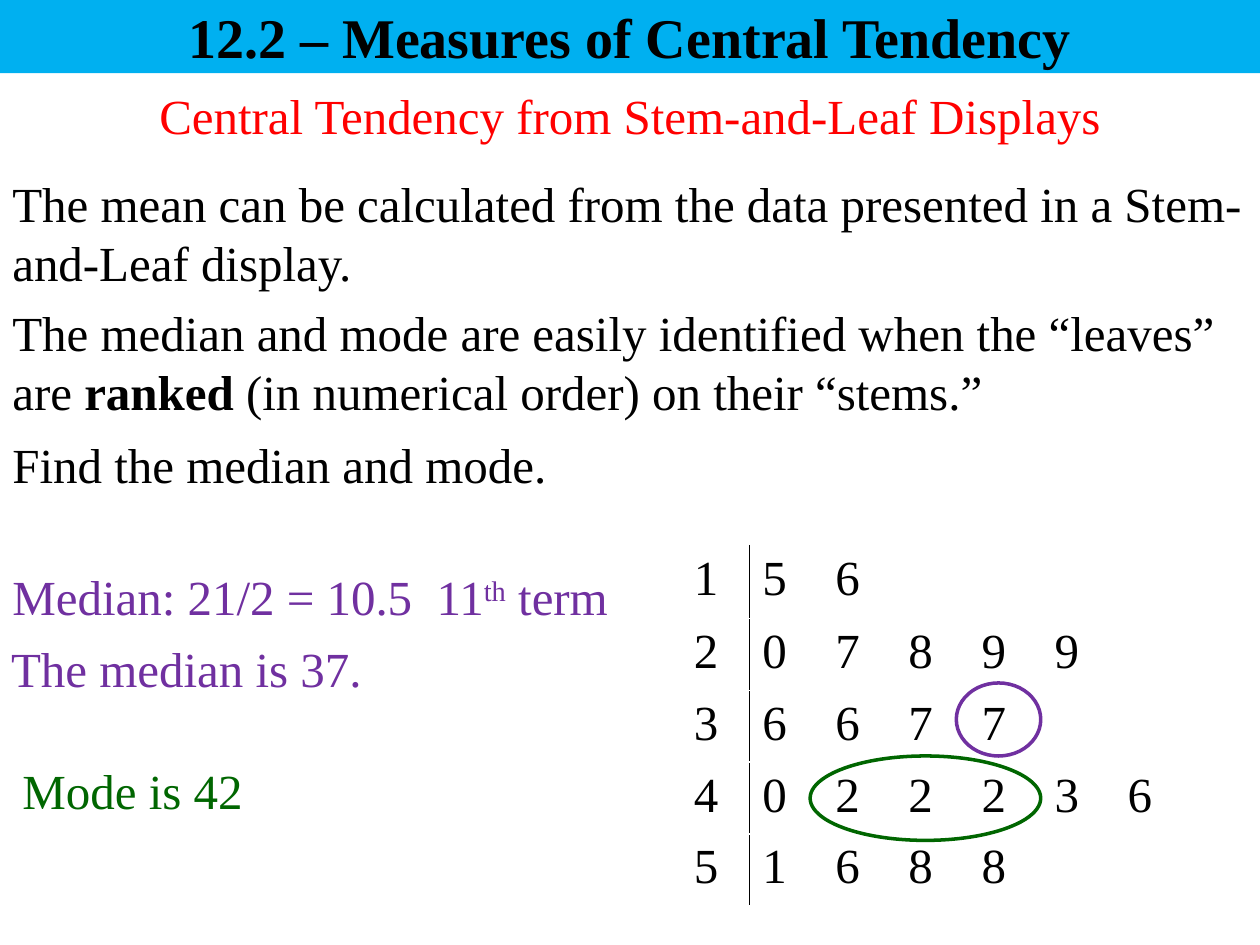
from dataclasses import dataclass

from lxml.etree import SubElement
from pptx import Presentation
from pptx.dml.color import RGBColor
from pptx.enum.shapes import MSO_SHAPE as Shape
from pptx.enum.text import MSO_ANCHOR as Anchor, MSO_AUTO_SIZE as AutoSize, PP_ALIGN as Align
from pptx.oxml.ns import qn
from pptx.util import Inches, Pt

FONT = "Times New Roman"
BLACK, RED, PURPLE, GREEN, BLUE = "000000", "FF0000", "7030A0", "006600", "00B0F0"
LEAF_PITCH = 0.58


@dataclass
class Note:
    left: float
    top: float
    width: float
    height: float
    spans: list[tuple[str, str]]
    color: str = BLACK


@dataclass
class Ring:
    left: float
    top: float
    width: float
    height: float
    color: str


NOTES = [
    Note(0, 1.33, 10, 1.04, [
        ("The mean can be calculated from the data presented in a Stem-and-Leaf display.", "")]),
    Note(0, 2.35, 10, 1.04, [
        ("The median and mode are easily identified when the “leaves” are ", ""),
        ("ranked", "bold"),
        (" (in numerical order) on their “stems.”", "")]),
    Note(0, 3.4, 10, 0.57, [("Find the median and mode.", "")]),
    Note(0, 4.45, 5.33, 0.57, [
        ("Median: 21/2 = 10.5  11", ""), ("th", "super"), (" term", "")], PURPLE),
    Note(-0.01, 5.02, 5.33, 0.57, [("The median is 37.", "")], PURPLE),
    Note(0.08, 5.99, 3.42, 0.57, [("Mode is 42", "")], GREEN),
]
RINGS = [Ring(7.59, 5.42, 0.67, 0.58, PURPLE), Ring(6.43, 6, 1.83, 0.67, GREEN)]
STEMS = {"1": "56", "2": "07899", "3": "6677", "4": "022236", "5": "1688"}


def rgb(color: str) -> RGBColor:
    return RGBColor.from_string(color)


def add_span(para, text: str, *, size=28, color=BLACK, bold=False, raised=False) -> None:
    span = para.add_run()
    span.text = text
    font = span.font
    font.name, font.size, font.bold = FONT, Pt(size), bold
    font.color.rgb = rgb(color)
    if raised:
        span._r.get_or_add_rPr().set("baseline", "30000")


def place(shape, left: float, top: float, width: float, height: float) -> None:
    shape.left, shape.top = Inches(left), Inches(top)
    shape.width, shape.height = Inches(width), Inches(height)


def add_note(page, note: Note) -> None:
    box = page.shapes.add_textbox(0, 0, 0, 0)
    place(box, note.left, note.top, note.width, note.height)
    box.text_frame.word_wrap = True
    para = box.text_frame.paragraphs[0]
    for text, style in note.spans:
        add_span(para, text, color=note.color, bold=style == "bold", raised=style == "super")


def add_ring(page, ring: Ring) -> None:
    oval = page.shapes.add_shape(Shape.OVAL, 0, 0, 0, 0)
    place(oval, ring.left, ring.top, ring.width, ring.height)
    oval.shadow.inherit = False
    oval.fill.background()
    oval.line.color.rgb = rgb(ring.color)
    oval.line.width = Pt(2)


def add_border(cell, side: str) -> None:
    props = cell._tc.get_or_add_tcPr()
    line = props.makeelement(qn(f"a:{side}"), {"w": str(Pt(1))})
    fill = SubElement(line, qn("a:solidFill"))
    SubElement(fill, qn("a:srgbClr"), val=BLACK)
    props.insert(0, line)


def add_tab_stops(para, count: int) -> None:
    stops = SubElement(para._p.get_or_add_pPr(), qn("a:tabLst"))
    for step in range(1, count):
        SubElement(stops, qn("a:tab"), pos=str(Inches(LEAF_PITCH * step)), algn="l")


def add_stem_table(page) -> None:
    frame = page.shapes.add_table(
        len(STEMS), 2, Inches(5.26), Inches(4.33), Inches(4.59), Inches(2.86))
    table = frame.table
    table.first_row = table.horz_banding = False
    table.columns[0].width, table.columns[1].width = Inches(0.69), Inches(3.9)
    for index, (stem, leaves) in enumerate(STEMS.items()):
        table.rows[index].height = Inches(0.57 if index else 0.58)
        stem_cell, leaf_cell = table.cell(index, 0), table.cell(index, 1)
        for cell, text, side in ((stem_cell, stem, "lnR"), (leaf_cell, "\t".join(leaves), "lnL")):
            cell.fill.background()
            add_border(cell, side)
            add_span(cell.text_frame.paragraphs[0], text)
        stem_cell.text_frame.paragraphs[0].alignment = Align.CENTER
        add_tab_stops(leaf_cell.text_frame.paragraphs[0], len(leaves))


def add_heading(shape, text: str, **style) -> None:
    frame = shape.text_frame
    frame.word_wrap, frame.auto_size = True, AutoSize.NONE
    frame.vertical_anchor = Anchor.MIDDLE
    para = frame.paragraphs[0]
    para.alignment = Align.CENTER
    add_span(para, text, **style)


def main() -> None:
    deck = Presentation()
    deck.slide_width, deck.slide_height = Inches(10), Inches(7.5)
    page = deck.slides.add_slide(deck.slide_layouts[5])

    title = page.shapes.title
    place(title, 0, 0.58, 10, 0.67)
    add_heading(title, "Central Tendency from Stem-and-Leaf Displays", color=RED)

    banner = page.shapes.add_shape(Shape.RECTANGLE, 0, 0, Inches(10), Inches(0.58))
    banner.shadow.inherit = False
    banner.fill.solid()
    banner.fill.fore_color.rgb = rgb(BLUE)
    banner.line.fill.background()
    add_heading(banner, "12.2 – Measures of Central Tendency", size=32, bold=True)

    add_stem_table(page)
    for note in NOTES:
        add_note(page, note)
    for ring in RINGS:
        add_ring(page, ring)
    deck.save("out.pptx")


if __name__ == "__main__":
    main()
